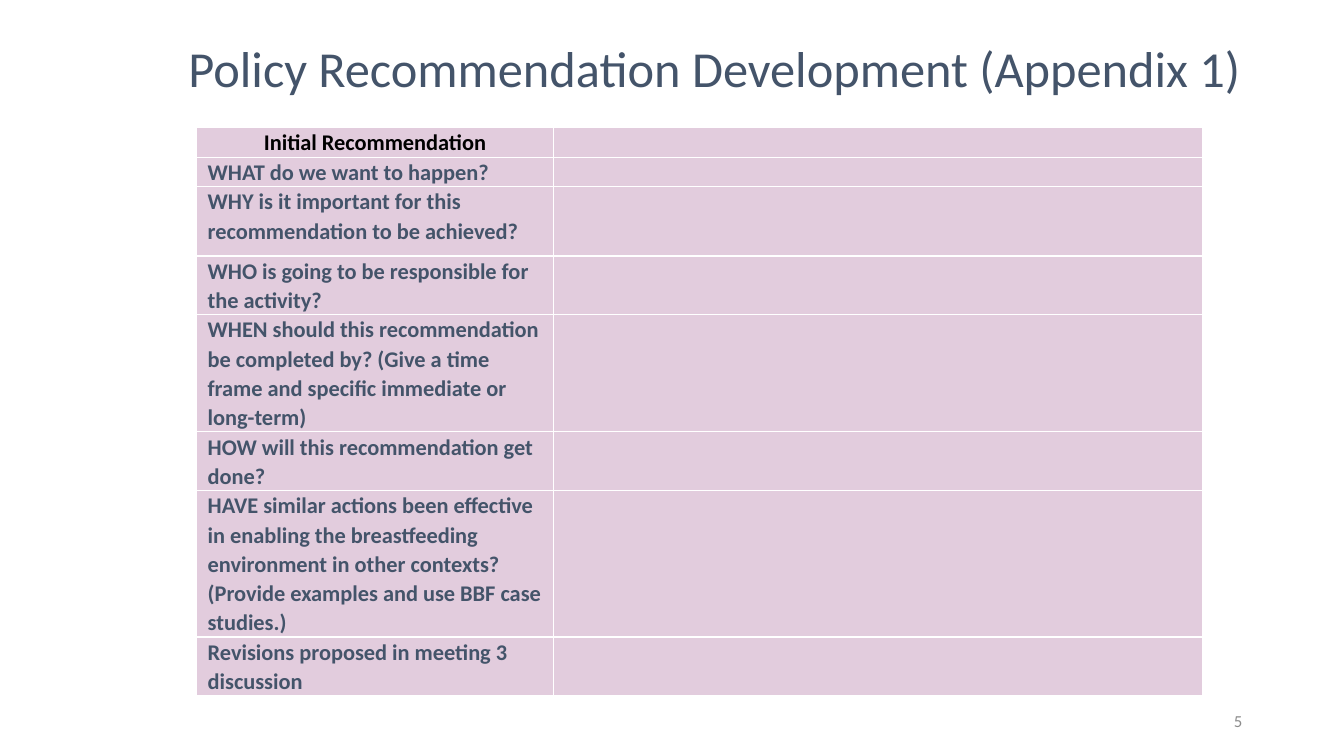
from pptx import Presentation
from pptx.dml.color import RGBColor
from pptx.enum.text import MSO_ANCHOR, PP_ALIGN
from pptx.util import Inches, Pt

LEFT, CENTER, RIGHT = PP_ALIGN.LEFT, PP_ALIGN.CENTER, PP_ALIGN.RIGHT
TOP, MIDDLE = MSO_ANCHOR.TOP, MSO_ANCHOR.MIDDLE
TITLE_ONLY = 5
FONT = "Calibri"
BLACK, SLATE, GREY, PINK = "000000", "44546A", "8C8C8C", "E2CCDD"
COLUMN_WIDTHS = [3.54, 6.44]
ROWS = [
    ("Initial Recommendation", 0.3),
    ("WHAT do we want to happen?", 0.29),
    ("WHY is it important for this recommendation to be achieved?", 0.69),
    ("WHO is going to be responsible for the activity?", 0.58),
    ("WHEN should this recommendation be completed by? "
     "(Give a time frame and specific immediate or long-term)", 1.16),
    ("HOW will this recommendation get done?", 0.58),
    ("HAVE similar actions been effective in enabling the breastfeeding "
     "environment in other contexts? (Provide examples and use BBF case studies.)", 1.45),
    ("Revisions proposed in meeting 3 discussion", 0.58),
]


def color(value):
    """Turn a hex string into a colour."""
    return RGBColor.from_string(value)


def write(text_frame, text, size=16, fill=SLATE, bold=False, align=LEFT, spacing=1.0, after=0):
    """Fill the first paragraph of a text frame with formatted text."""
    paragraph = text_frame.paragraphs[0]
    paragraph.alignment = align
    paragraph.line_spacing = spacing
    paragraph.space_after = Pt(after)
    run = paragraph.add_run()
    run.text = text
    run.font.name = FONT
    run.font.size = Pt(size)
    run.font.bold = bold
    run.font.color.rgb = color(fill)


def place_title(slide, left, top, width, height):
    """Move the title placeholder into its box and write the heading."""
    title = slide.shapes.title
    title.left, title.top = Inches(left), Inches(top)
    title.width, title.height = Inches(width), Inches(height)
    text_frame = title.text_frame
    text_frame.word_wrap = True
    text_frame.vertical_anchor = MIDDLE
    text_frame.margin_right = Inches(0.15)
    write(text_frame, "Policy Recommendation Development (Appendix 1)",
          size=36, align=RIGHT, spacing=0.9)


def format_cell(cell):
    """Give a table cell its fill, insets and empty-text size."""
    cell.fill.solid()
    cell.fill.fore_color.rgb = color(PINK)
    cell.margin_left = cell.margin_right = Inches(0.11)
    cell.margin_top = cell.margin_bottom = 0
    cell.vertical_anchor = TOP
    paragraph = cell.text_frame.paragraphs[0]
    paragraph._p.get_or_add_endParaRPr().set("sz", "1600")


def add_question_table(slide, left, top):
    """Add the table of questions with an empty answer column."""
    width, height = sum(COLUMN_WIDTHS), sum(row_height for _, row_height in ROWS)
    table = slide.shapes.add_table(len(ROWS), len(COLUMN_WIDTHS), Inches(left), Inches(top),
                                   Inches(width), Inches(height)).table
    table.horz_banding = False
    for column, column_width in zip(table.columns, COLUMN_WIDTHS):
        column.width = Inches(column_width)
    for index, (question, row_height) in enumerate(ROWS):
        row = table.rows[index]
        row.height = Inches(row_height)
        for cell in row.cells:
            format_cell(cell)
        header = index == 0
        write(row.cells[0].text_frame, question, fill=BLACK if header else SLATE, bold=True,
              align=CENTER if header else LEFT, spacing=1.07, after=8)


def add_page_number(slide, number, left, top, width, height):
    """Add the page number at the right end of its box."""
    text_box = slide.shapes.add_textbox(Inches(left), Inches(top), Inches(width), Inches(height))
    text_box.text_frame.word_wrap = True
    text_box.text_frame.vertical_anchor = MIDDLE
    write(text_box.text_frame, number, size=12, fill=GREY, align=RIGHT)


def main():
    """Build the slide and save it."""
    presentation = Presentation()
    presentation.slide_width, presentation.slide_height = Inches(13.33), Inches(7.5)
    slide = presentation.slides.add_slide(presentation.slide_layouts[TITLE_ONLY])
    add_question_table(slide, 1.95, 1.26)
    add_page_number(slide, "5", 9.42, 6.95, 3, 0.4)
    place_title(slide, 0.86, 0.31, 11.6, 0.8)
    presentation.save("out.pptx")


if __name__ == "__main__":
    main()
